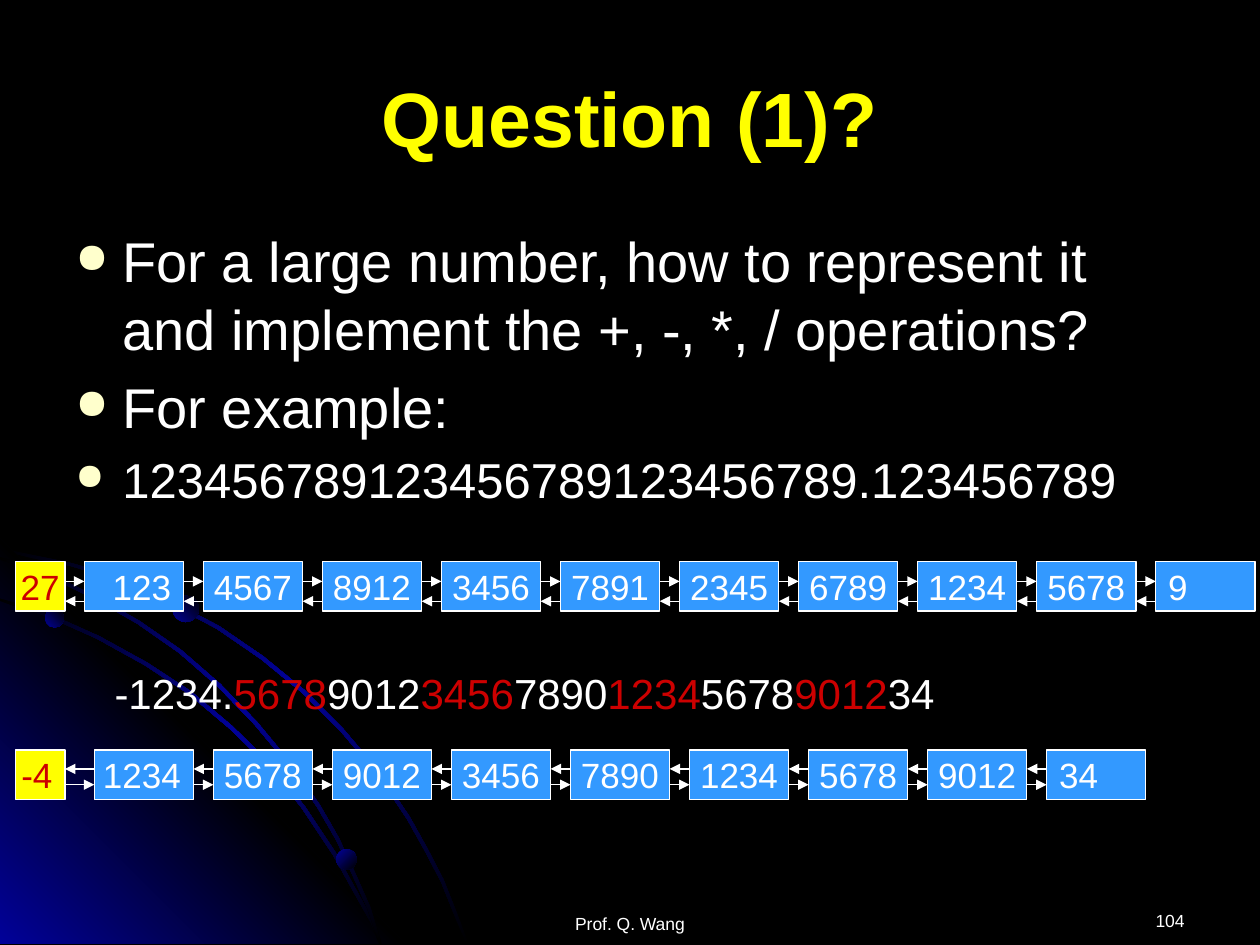
from copy import deepcopy

from lxml.etree import SubElement
from pptx import Presentation
from pptx.dml.color import RGBColor
from pptx.enum.shapes import MSO_CONNECTOR as Connector, MSO_SHAPE as Shape
from pptx.enum.text import MSO_ANCHOR as Anchor, PP_ALIGN as Align
from pptx.oxml.ns import qn
from pptx.util import Cm, Pt

WHITE, BLACK, YELLOW, RED = "FFFFFF", "000000", "FFFF00", "CC0000"
CELL_BLUE, GLOW_BLUE, BULLET_CREAM = "3399FF", "010199", "FFFFCC"
CELL_WIDTH, CELL_HEIGHT, GAP = 2, 1, 0.4
HEAD_LEFT, HEAD_WIDTH = 0.31, 1
GRID = Cm(0.0254)
BOTTOM = 749
BAND = 2

OUTER_ARC = [(0, 435), (28, 441), (57, 447), (98, 459), (136, 477), (174, 497),
             (209, 521), (242, 548), (272, 578), (300, 611), (325, 648),
             (339, 673), (352, 698), (362, 723), (372, BOTTOM)]
INNER_ARC = [(0, 475), (41, 488), (79, 505), (117, 526), (152, 549), (184, 576),
             (215, 606), (242, 640), (266, 676), (286, 712), (296, 730),
             (303, BOTTOM)]
MIDDLE_ARC = [(0, 442), (39, 455), (76, 473), (111, 493), (144, 516), (175, 543),
              (204, 573), (229, 603), (254, 639), (269, 665), (282, 693),
              (294, 720), (303, BOTTOM)]
CORNER = [(322, BOTTOM), (0, BOTTOM), (0, 427)]


def color(value):
    return RGBColor.from_string(value)


def set_font(font, size, value, bold=False):
    font.name = "Arial"
    font.size = Pt(size)
    font.bold = bold
    font.color.rgb = color(value)


def fill_gradient(shape, values, angle):
    shape.shadow.inherit = False
    shape.line.fill.background()
    fill = shape.fill
    fill.gradient()
    fill.gradient_angle = (360 - angle) % 360
    stop_list = shape._element.spPr.find(qn("a:gradFill")).find(qn("a:gsLst"))
    while len(stop_list) < len(values):
        stop_list.append(deepcopy(stop_list[0]))
    for index, (stop, value) in enumerate(zip(fill.gradient_stops, values)):
        stop.position = index / (len(values) - 1)
        stop.color.rgb = color(value)


def add_outline(shapes, points, values, angle):
    builder = shapes.build_freeform(*points[0], scale=GRID)
    builder.add_line_segments(points[1:], close=True)
    fill_gradient(builder.convert_to_shape(), values, angle)


def add_arc(shapes, edge):
    inner_edge = [(max(x - BAND, 0), min(y + BAND, BOTTOM)) for x, y in edge]
    add_outline(shapes, edge + inner_edge[::-1], [BLACK, GLOW_BLUE, BLACK], 45)


def add_dot(shapes, left, top, size, angle):
    dot = shapes.add_shape(Shape.OVAL, Cm(left), Cm(top), Cm(size), Cm(size))
    fill_gradient(dot, [GLOW_BLUE, BLACK], angle)


def add_backdrop(slide):
    slide.background.fill.solid()
    slide.background.fill.fore_color.rgb = color(BLACK)
    shapes = slide.shapes.add_group_shape().shapes
    add_arc(shapes, OUTER_ARC)
    add_outline(shapes, CORNER, [GLOW_BLUE, BLACK, GLOW_BLUE], 315)
    add_arc(shapes, INNER_ARC)
    add_arc(shapes, MIDDLE_ARC)
    add_dot(shapes, 0.91, 12.27, 0.38, 315)
    add_dot(shapes, 6.78, 17.12, 0.41, 45)
    add_dot(shapes, 3.48, 12.01, 0.53, 315)


def add_text_box(slide, left, top, width, height, wrap=True):
    box = slide.shapes.add_textbox(Cm(left), Cm(top), Cm(width), Cm(height))
    box.text_frame.word_wrap = wrap
    return box.text_frame


def add_label(slide, place, text, size, value, align, bold=False):
    frame = add_text_box(slide, *place)
    para = frame.paragraphs[0]
    para.text = text
    para.alignment = align
    set_font(para.font, size, value, bold)
    return frame


def add_bullets(slide, place, items):
    frame = add_text_box(slide, *place)
    for index, (text, size) in enumerate(items):
        para = frame.add_paragraph() if index else frame.paragraphs[0]
        para.text = text
        para.space_before = Pt(size * 0.2)
        set_font(para.font, size, WHITE)
        properties = para._p.get_or_add_pPr()
        properties.set("marL", str(Cm(0.95)))
        properties.set("indent", str(-Cm(0.95)))
        bullet_color = SubElement(properties, qn("a:buClr"))
        SubElement(bullet_color, qn("a:srgbClr"), val=BULLET_CREAM)
        SubElement(properties, qn("a:buSzPct"), val="75000")
        SubElement(properties, qn("a:buChar"), char="●")


def add_striped_number(slide, place, parts):
    para = add_text_box(slide, *place, wrap=False).paragraphs[0]
    para.space_before = Pt(4.8)
    for index, part in enumerate(parts):
        span = para.add_run()
        span.text = part
        set_font(span.font, 24, RED if index % 2 else WHITE)


def add_cell(shapes, left, top, width, text, align, fill=CELL_BLUE, ink=WHITE):
    cell = shapes.add_shape(Shape.RECTANGLE, Cm(left), Cm(top), Cm(width), Cm(CELL_HEIGHT))
    cell.shadow.inherit = False
    cell.fill.solid()
    cell.fill.fore_color.rgb = color(fill)
    cell.line.color.rgb = color(WHITE)
    cell.line.width = Pt(0.75)
    frame = cell.text_frame
    frame.word_wrap = False
    frame.vertical_anchor = Anchor.MIDDLE
    para = frame.paragraphs[0]
    para.text = text
    para.alignment = align
    set_font(para.font, 20, ink)


def add_arrow(shapes, start, end, height):
    arrow = shapes.add_connector(Connector.STRAIGHT, Cm(start), Cm(height), Cm(end), Cm(height))
    arrow.line.color.rgb = color(WHITE)
    arrow.line.width = Pt(0.75)
    SubElement(arrow.line._get_or_add_ln(), qn("a:tailEnd"), type="triangle")
    SubElement(arrow._element.spPr, qn("a:effectLst"))


def add_chain(slide, top, first_left, head, head_align, blocks, next_offset, back_offset):
    shapes = slide.shapes.add_group_shape().shapes
    add_cell(shapes, HEAD_LEFT, top, HEAD_WIDTH, head, head_align, YELLOW, RED)
    previous_right = HEAD_LEFT + HEAD_WIDTH
    aligns = [Align.RIGHT] + [Align.CENTER] * (len(blocks) - 2) + [Align.LEFT]
    for index, (block, align) in enumerate(zip(blocks, aligns)):
        left = first_left + index * (CELL_WIDTH + GAP)
        add_cell(shapes, left, top, CELL_WIDTH, block, align)
        add_arrow(shapes, previous_right, left, top + next_offset)
        add_arrow(shapes, left, previous_right, top + back_offset)
        previous_right = left + CELL_WIDTH


def main():
    deck = Presentation()
    deck.slide_width, deck.slide_height = Cm(25.4), Cm(19.05)
    slide = deck.slides.add_slide(deck.slide_layouts[6])
    add_backdrop(slide)

    page_number = add_label(slide, (18.2, 17.8, 5.93, 1.27), "104", 10, WHITE, Align.RIGHT)
    footer = add_label(slide, (8.68, 17.86, 8.04, 1.27), "Prof. Q. Wang", 10, WHITE, Align.CENTER)
    for frame in (page_number, footer):
        frame.margin_top = Cm(0.54)
    title = add_label(slide, (1.27, 0.76, 22.86, 3.18), "Question (1)?", 44, YELLOW,
                      Align.CENTER, bold=True)
    title.vertical_anchor = Anchor.MIDDLE

    add_bullets(slide, (1.27, 4.45, 22.86, 12.57), [
        ("For a large number, how to represent it and implement the +, -, *, / operations?", 32),
        ("For example:", 32),
        ("123456789123456789123456789.123456789", 28),
    ])
    add_striped_number(slide, (2.06, 13.34, 17.22, 1.27),
                       ["-1234.", "5678", "9012", "3456", "7890", "1234", "5678", "9012", "34"])
    add_chain(slide, 11.32, 1.7, "27", Align.CENTER,
              ["123", "4567", "8912", "3456", "7891", "2345", "6789", "1234", "5678", "9"],
              next_offset=0.4, back_offset=0.8)
    add_chain(slide, 15.12, 1.9, "-4", Align.RIGHT,
              ["1234", "5678", "9012", "3456", "7890", "1234", "5678", "9012", "34"],
              next_offset=0.7, back_offset=0.38)
    deck.save("out.pptx")


if __name__ == "__main__":
    main()
